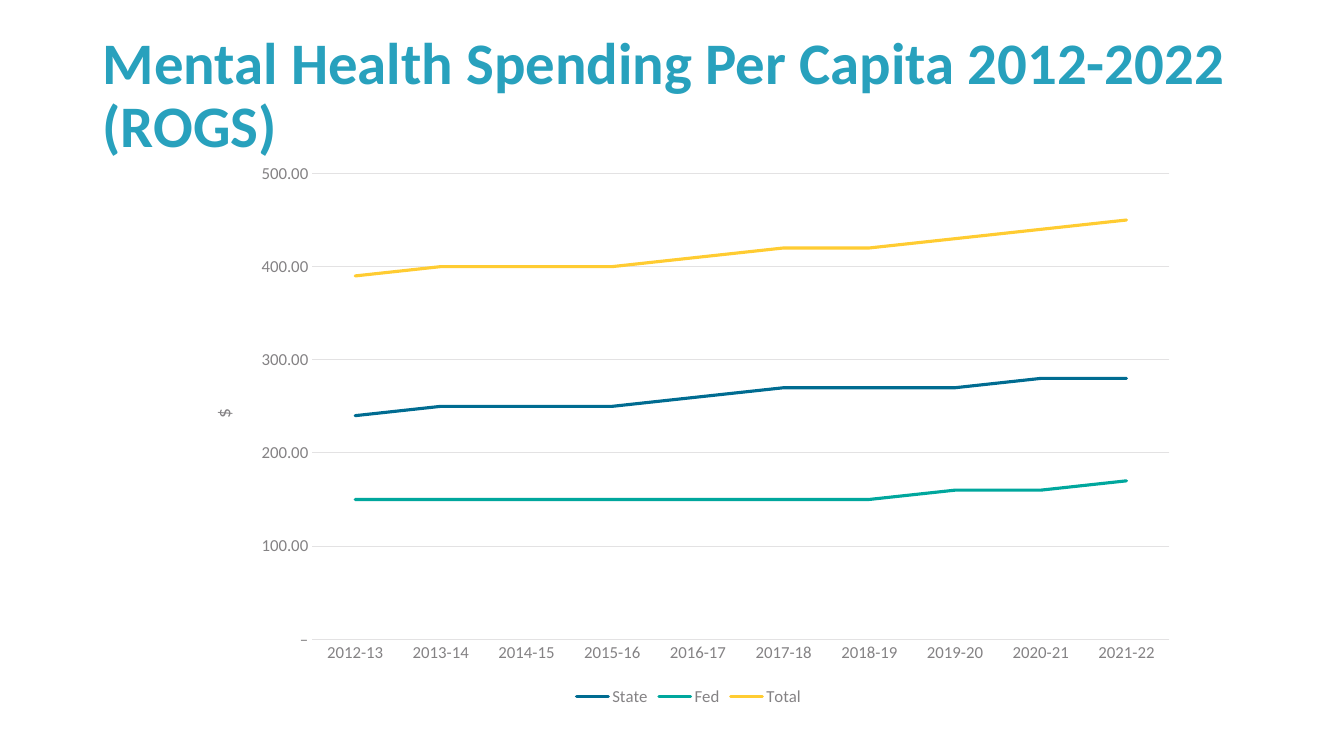
from pptx import Presentation
from pptx import util as u
from pptx.chart.data import CategoryChartData
from pptx.dml.color import RGBColor
from pptx.enum import chart as ch, text
from pptx.oxml import parse_xml
from pptx.oxml.ns import nsdecls

WIDE, HIGH = 13.33, 7.5
GRID = 1000
FONT = "Calibri"
HUE = {"title": "28A1BD", "label": "848284", "grid": "E3E2E3",
       "State": "006C91", "Fed": "00A79D", "Total": "FFCC32"}
YEARS = [f"{year}-{year % 100 + 1}" for year in range(2012, 2022)]
SPEND = {
    "State": (240, 250, 250, 250, 260, 270, 270, 270, 280, 280),
    "Fed": (150, 150, 150, 150, 150, 150, 150, 160, 160, 170),
    "Total": (390, 400, 400, 400, 410, 420, 420, 430, 440, 450),
}


def style(font, size=12, hue="label", bold=False):
    font.name, font.size, font.bold = FONT, u.Pt(size), bold
    font.color.rgb = RGBColor.from_string(HUE[hue])


def stroke(line, hue, width):
    line.color.rgb = RGBColor.from_string(HUE[hue])
    line.width = u.Pt(width)


def write(frame, words, space=None, **look):
    para = frame.paragraphs[0]
    para.line_spacing = space
    run = para.add_run()
    run.text = words
    style(run.font, **look)


def head(slide, box):
    frame = slide.shapes.add_textbox(*box).text_frame
    frame.word_wrap = True
    frame.vertical_anchor = text.MSO_ANCHOR.MIDDLE
    write(frame, "Mental Health Spending Per Capita 2012-2022 (ROGS)",
          space=0.9, size=42, hue="title", bold=True)


def place(chart, **cells):
    plot = chart.element.chart.plotArea
    for old in plot.xpath("c:layout"):
        plot.remove(old)
    parts = "".join(f'<c:{key} val="{val / GRID}"/>'
                    for key, val in cells.items())
    plot.insert(0, parse_xml(
        f'<c:layout {nsdecls("c")}><c:manualLayout><c:layoutTarget val="inner"/>'
        '<c:xMode val="edge"/><c:yMode val="edge"/>'
        f'{parts}</c:manualLayout></c:layout>'))


def axes(chart):
    years, cost = chart.category_axis, chart.value_axis
    for axis in (years, cost):
        axis.major_tick_mark = axis.minor_tick_mark = ch.XL_TICK_MARK.NONE
        style(axis.tick_labels.font)
    stroke(years.format.line, "grid", 0.75)
    cost.format.line.fill.background()
    cost.minimum_scale, cost.maximum_scale, cost.major_unit = 0, 500, 100
    cost.has_major_gridlines = True
    stroke(cost.major_gridlines.format.line, "grid", 0.75)
    cost.tick_labels.number_format = r"#,##0.00;\-#,##0.00;\–;@"
    cost.tick_labels.number_format_is_linked = False
    write(cost.axis_title.text_frame, "$", size=14)
    for body in cost.axis_title.element.xpath(".//a:bodyPr"):
        body.set("rot", "-5400000")
        body.set("vert", "horz")


def graph(slide, box):
    data = CategoryChartData()
    data.categories = YEARS
    for name, vals in SPEND.items():
        data.add_series(name, vals)
    chart = slide.shapes.add_chart(ch.XL_CHART_TYPE.LINE, *box, data).chart
    chart.has_title = False
    style(chart.font)
    axes(chart)
    place(chart, x=124, y=36, w=856, h=836)
    for line in chart.plots[0].series:
        line.smooth = False
        line.marker.style = ch.XL_MARKER_STYLE.NONE
        stroke(line.format.line, line.name, 2.25)
        for edge in line.format.element.xpath("c:spPr/a:ln") if hasattr(
                line.format, "element") else line._element.xpath("c:spPr/a:ln"):
            edge.set("cap", "rnd")
    chart.plots[0].vary_by_categories = False
    chart.has_legend = True
    chart.legend.position = ch.XL_LEGEND_POSITION.BOTTOM
    chart.legend.include_in_layout = False
    style(chart.legend.font)


def area(left, top, wide, high):
    return [u.Inches(cells * side / GRID) for cells, side in
            ((left, WIDE), (top, HIGH), (wide, WIDE), (high, HIGH))]


def main():
    deck = Presentation()
    deck.slide_width, deck.slide_height = u.Inches(WIDE), u.Inches(HIGH)
    slide = deck.slides.add_slide(deck.slide_layouts[6])
    graph(slide, area(140, 203, 745, 737))
    head(slide, area(69, 32, 863, 193))
    deck.save("out.pptx")


if __name__ == "__main__":
    main()
